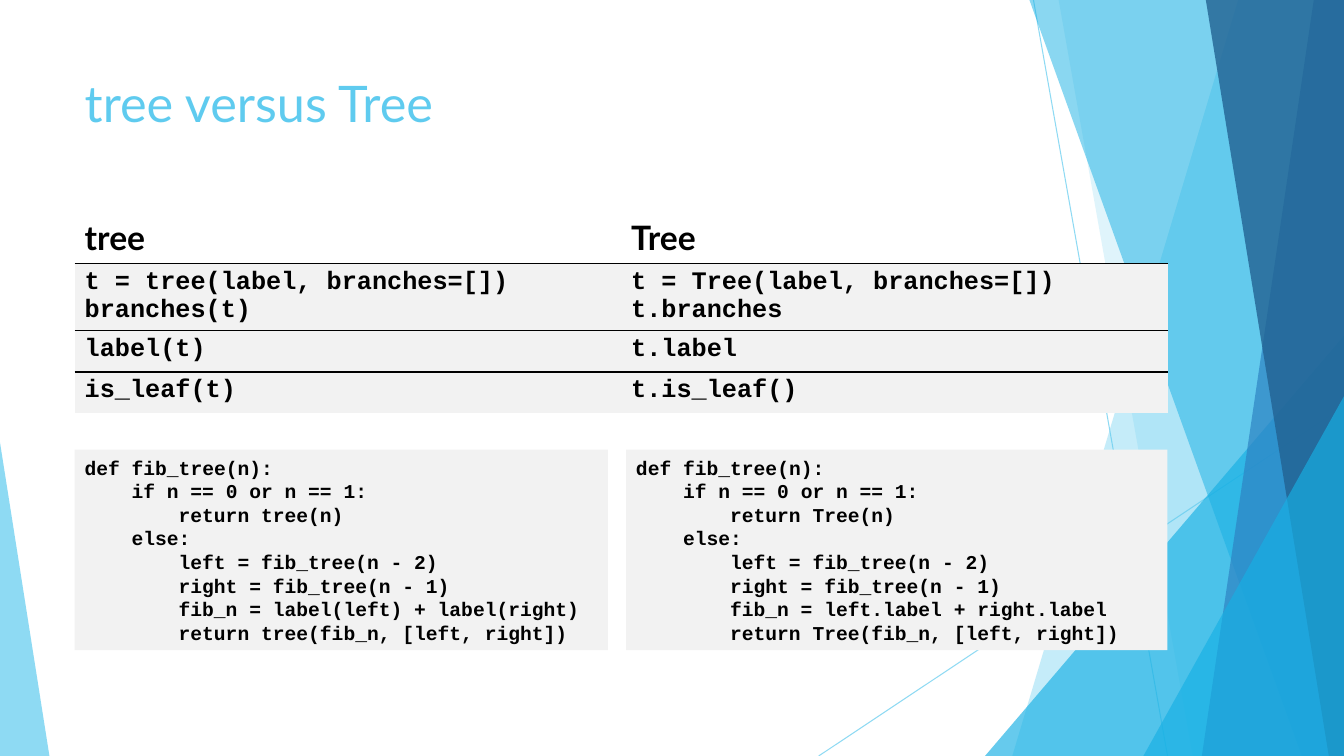
from lxml import etree
from pptx import Presentation
from pptx.dml.color import RGBColor
from pptx.enum.shapes import MSO_CONNECTOR, MSO_SHAPE
from pptx.enum.text import MSO_ANCHOR, PP_ALIGN
from pptx.oxml.ns import qn
from pptx.util import Inches, Pt

STRAIGHT = MSO_CONNECTOR.STRAIGHT
TRIANGLE, RECT = MSO_SHAPE.ISOSCELES_TRIANGLE, MSO_SHAPE.RECTANGLE
TOP, MIDDLE, LEFT = MSO_ANCHOR.TOP, MSO_ANCHOR.MIDDLE, PP_ALIGN.LEFT
W, H = 13.33, 7.5
SKY, CYAN, BLUE, NAVY = "5FCBEF", "17B0E4", "2E83C3", "226292"
BLACK, PALE = "000000", "F2F2F2"


def paint(fill, color, opacity=100):
    fill.solid()
    fill.fore_color.rgb = RGBColor.from_string(color)
    if opacity < 100:
        clr = fill._xPr.find(".//" + qn("a:srgbClr"))
        etree.SubElement(clr, qn("a:alpha"), val=str(opacity * 1000))


def style(p, font, size, color, bold):
    p.alignment = LEFT
    for r in p.runs:
        r.font.name = font
        r.font.size = Pt(size)
        r.font.bold = bold
        paint(r.font.fill, color)


prs = Presentation()
prs.slide_width, prs.slide_height = Inches(W), Inches(H)
s = prs.slides.add_slide(prs.slide_layouts[5])

for x1, y1, x2, y2 in [(10.25, 0, 11.58, H), (W, 4.03, 8.12, H)]:
    line = s.shapes.add_connector(STRAIGHT, Inches(x1), Inches(y1), Inches(x2), Inches(y2))
    line.line.width = Pt(0.75)
    paint(line.line.fill, SKY, 70)
    etree.SubElement(line._element.spPr, qn("a:effectLst"))

facets = [
    ("band", 12.28, 10.04, SKY, 36),
    ("band", 10.5, 11.83, SKY, 20),
    ("triangle", 9.77, 3.33, CYAN, 66),
    ("band", 10.21, 12.91, CYAN, 50),
    ("band", 13.03, 11.92, BLUE, 70),
    ("band", 11.96, 13.18, NAVY, 80),
    ("triangle", 11.34, 3.93, CYAN, 66),
    ("corner", 0, 4.39, SKY, 70),
]
for kind, a, b, color, opacity in facets:
    if kind == "band":
        fb = s.shapes.build_freeform(Inches(a), 0)
        fb.add_line_segments([(Inches(x), Inches(y)) for x, y in [(W, 0), (W, H), (b, H)]])
        sp = fb.convert_to_shape()
    else:
        width = 0.49 if kind == "corner" else W - a
        sp = s.shapes.add_shape(TRIANGLE, Inches(a), Inches(b), Inches(width), Inches(H - b))
        sp.adjustments[0] = 0 if kind == "corner" else 1
    sp.shadow.inherit = False
    sp.line.fill.background()
    paint(sp.fill, color, opacity)

title = s.shapes.title
title.left, title.top = Inches(0.74), Inches(0.67)
title.width, title.height = Inches(9.4), Inches(1.44)
tf = title.text_frame
tf.text = "tree versus Tree"
tf.vertical_anchor = TOP
style(tf.paragraphs[0], "Lato", 36, SKY, False)

rows = [
    ("tree", "Tree"),
    ("t = tree(label, branches=[])\nbranches(t)", "t = Tree(label, branches=[])\nt.branches"),
    ("label(t)", "t.label"),
    ("is_leaf(t)", "t.is_leaf()"),
]
heights = [0.5, 0.67, 0.41, 0.41]
table = s.shapes.add_table(4, 2, Inches(0.74), Inches(2.11), Inches(10.84), Inches(sum(heights))).table
table.first_row = table.horz_banding = False
for i, texts in enumerate(rows):
    table.rows[i].height = Inches(heights[i])
    for j, text in enumerate(texts):
        cell = table.cell(i, j)
        cell.text = text
        font, size = ("Lato", 24) if i == 0 else ("Courier New", 18)
        for p in cell.text_frame.paragraphs:
            style(p, font, size, BLACK, True)
        ruled = {"lnT": i > 0, "lnB": i < len(rows) - 1}
        for side in ("lnL", "lnR", "lnT", "lnB"):
            ln = etree.SubElement(cell._tc.get_or_add_tcPr(), qn("a:" + side), w="12700")
            if ruled.get(side):
                fill = etree.SubElement(ln, qn("a:solidFill"))
                etree.SubElement(fill, qn("a:srgbClr"), val=BLACK)
            else:
                etree.SubElement(ln, qn("a:noFill"))
        if i == 0:
            cell.fill.background()
        else:
            paint(cell.fill, PALE)

INDENT = 4 * 0.6 * 14 / 72
programs = [
    (0.74, 5.29, "tree", "label(left) + label(right)"),
    (6.21, 5.37, "Tree", "left.label + right.label"),
]
for left, width, maker, total in programs:
    code = [
        (0, "def fib_tree(n):"),
        (1, "if n == 0 or n == 1:"),
        (2, f"return {maker}(n)"),
        (1, "else:"),
        (2, "left = fib_tree(n - 2)"),
        (2, "right = fib_tree(n - 1)"),
        (2, f"fib_n = {total}"),
        (2, f"return {maker}(fib_n, [left, right])"),
    ]
    sp = s.shapes.add_shape(RECT, Inches(left), Inches(4.46), Inches(width), Inches(1.99))
    sp.shadow.inherit = False
    sp.line.fill.background()
    paint(sp.fill, PALE)
    tf = sp.text_frame
    tf.word_wrap = True
    tf.vertical_anchor = MIDDLE
    tf.text = "\n".join(text for depth, text in code)
    for p, (depth, text) in zip(tf.paragraphs, code):
        style(p, "Courier New", 14, BLACK, True)
        p._p.get_or_add_pPr().set("marL", str(Inches(depth * INDENT)))

prs.save("out.pptx")
